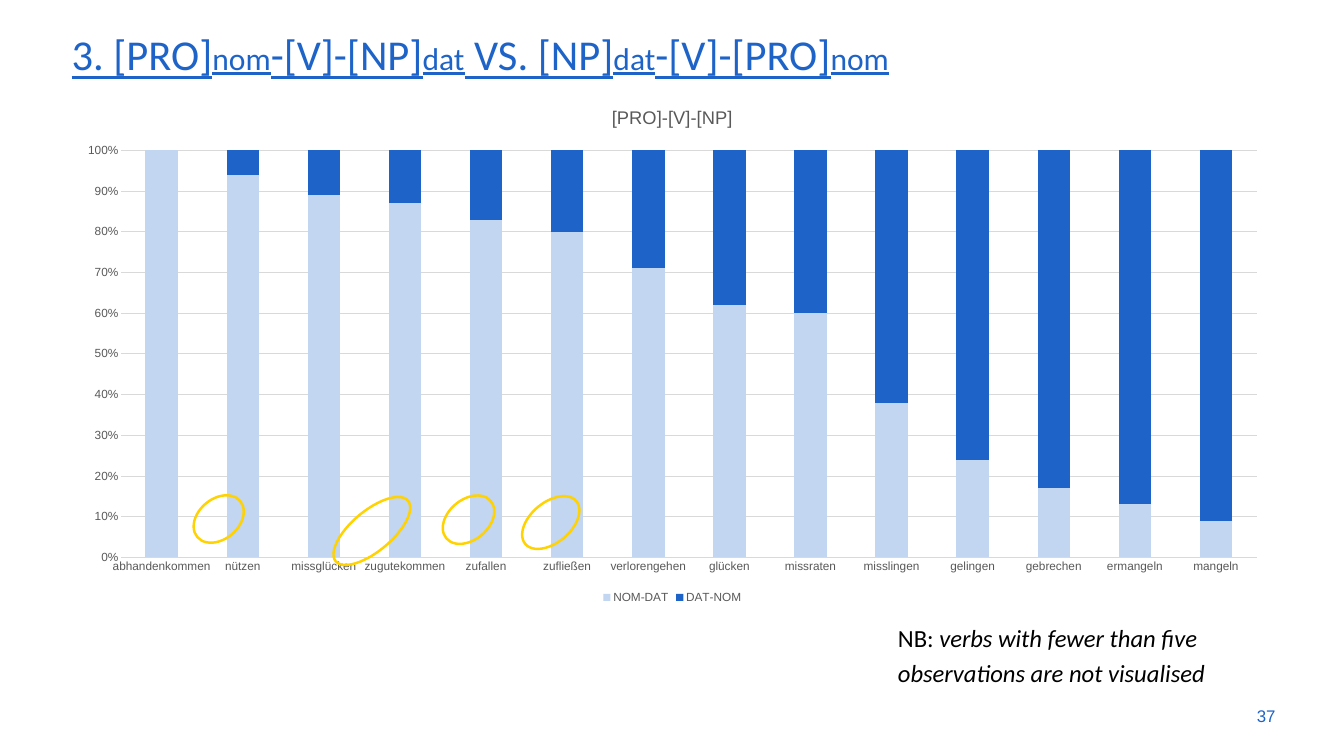
from dataclasses import dataclass

from pptx import Presentation
from pptx import util as u
from pptx.chart.data import CategoryChartData
from pptx.dml.color import RGBColor
from pptx.enum import chart as charts, shapes, text

Pt = u.Pt
BLUE = RGBColor(0x1E, 0x64, 0xC8)
PALE_BLUE = RGBColor(0xC2, 0xD5, 0xF1)
YELLOW = RGBColor(0xFF, 0xD2, 0x00)
BLACK = RGBColor(0, 0, 0)
GREY = RGBColor(0x59, 0x59, 0x59)
GRID = RGBColor(0xD9, 0xD9, 0xD9)


@dataclass(frozen=True)
class Box:
    left: float
    top: float
    width: float
    height: float

    def emu(self) -> tuple:
        return Pt(self.left), Pt(self.top), Pt(self.width), Pt(self.height)


TITLE_BOX = Box(65.5, 20.2, 1237, 67.7)
CHART_BOX = Box(64.8, 89.3, 1236.2, 527)
NOTE_BOX = Box(905, 623.5, 397.4, 76.3)
NUMBER_BOX = Box(1229.8, 707, 72.7, 41)
RING_HEIGHT = 41
RINGS = [
    Box(329.8, 519.1, 95.8, RING_HEIGHT),
    Box(446.4, 507.6, 59, RING_HEIGHT),
    Box(525.6, 510.5, 67.7, RING_HEIGHT),
    Box(193.7, 506.9, 56.9, RING_HEIGHT),
]

TITLE_PARTS = [("3. [pro]", "nom"), ("-[v]-[np]", "dat"),
               (" vs. [np]", "dat"), ("-[v]-[pro]", "nom")]
NOM_DAT = {
    "abhandenkommen": 100, "nützen": 94, "missglücken": 89,
    "zugutekommen": 87, "zufallen": 83, "zufließen": 80,
    "verlorengehen": 71, "glücken": 62, "missraten": 60,
    "misslingen": 38, "gelingen": 24, "gebrechen": 17,
    "ermangeln": 13, "mangeln": 9,
}


def format_font(font, size: float, color: RGBColor, name: str = "Arial") -> None:
    font.name, font.size, font.bold = name, Pt(size), False
    font.color.rgb = color


def add_run(p, content: str, *, size: float, color: RGBColor,
            name: str = "Calibri", italic: bool = False,
            underline: bool = False, small_caps: bool = False) -> None:
    r = p.add_run()
    r.text = content
    format_font(r.font, size, color, name)
    if italic:
        r.font.italic = True
    if underline:
        r.font.underline = True
    if small_caps:
        r._r.get_or_add_rPr().set("cap", "small")


def add_title(s) -> None:
    sp = s.shapes.title
    sp.left, sp.top, sp.width, sp.height = TITLE_BOX.emu()
    tf = sp.text_frame
    tf.word_wrap = True
    tf.auto_size = text.MSO_AUTO_SIZE.NONE
    tf.vertical_anchor = text.MSO_ANCHOR.MIDDLE
    p = tf.paragraphs[0]
    p.alignment = text.PP_ALIGN.LEFT
    p.line_spacing = 0.9
    for pattern, case in TITLE_PARTS:
        add_run(p, pattern, size=54, color=BLUE, underline=True, small_caps=True)
        add_run(p, case, size=32, color=BLUE, underline=True)


def add_text_box(s, box: Box):
    tf = s.shapes.add_textbox(*box.emu()).text_frame
    tf.word_wrap = True
    return tf


def format_axis(axis) -> None:
    axis.major_tick_mark = axis.minor_tick_mark = charts.XL_TICK_MARK.NONE
    format_font(axis.tick_labels.font, 12, GREY)


def format_line(line, color: RGBColor, width: float) -> None:
    line.color.rgb = color
    line.width = Pt(width)


def add_verb_chart(s) -> None:
    data = CategoryChartData()
    data.categories = list(NOM_DAT)
    data.add_series("NOM-DAT", list(NOM_DAT.values()))
    data.add_series("DAT-NOM", [100 - share for share in NOM_DAT.values()])
    chart = s.shapes.add_chart(charts.XL_CHART_TYPE.COLUMN_STACKED_100,
                               *CHART_BOX.emu(), data).chart
    format_font(chart.font, 10, BLACK)

    chart.has_title = True
    p = chart.chart_title.text_frame.paragraphs[0]
    add_run(p, "[PRO]-[V]-[NP]", size=18.6, color=GREY, name="Arial")
    chart.chart_title.include_in_layout = False

    chart.has_legend = True
    chart.legend.position = charts.XL_LEGEND_POSITION.BOTTOM
    chart.legend.include_in_layout = False
    format_font(chart.legend.font, 12, GREY)

    verbs, shares = chart.category_axis, chart.value_axis
    format_axis(verbs)
    format_line(verbs.format.line, GRID, 0.75)
    format_axis(shares)
    shares.format.line.fill.background()
    shares.has_major_gridlines = True
    format_line(shares.major_gridlines.format.line, GRID, 0.75)
    shares.tick_labels.number_format = "0%"
    shares.tick_labels.number_format_is_linked = False

    plot = chart.plots[0]
    plot.gap_width, plot.overlap = 150, 100
    plot.vary_by_categories = False
    for series, color in zip(plot.series, (PALE_BLUE, BLUE)):
        series.format.fill.solid()
        series.format.fill.fore_color.rgb = color


def add_page_number(s) -> None:
    tf = add_text_box(s, NUMBER_BOX)
    tf.vertical_anchor = text.MSO_ANCHOR.MIDDLE
    p = tf.paragraphs[0]
    p.alignment = text.PP_ALIGN.RIGHT
    add_run(p, "37", size=17.1, color=BLUE, name="Arial")


def add_note(s) -> None:
    tf = add_text_box(s, NOTE_BOX)
    tf.auto_size = text.MSO_AUTO_SIZE.SHAPE_TO_FIT_TEXT
    p = tf.paragraphs[0]
    p.line_spacing = 1.2
    add_run(p, "NB: ", size=25, color=BLACK)
    add_run(p, "verbs with fewer than five observations are not visualised",
            size=25, color=BLACK, italic=True)


def add_ring(s, box: Box) -> None:
    sp = s.shapes.add_shape(shapes.MSO_SHAPE.OVAL, *box.emu())
    sp.rotation = 320
    sp.shadow.inherit = False
    sp.fill.background()
    format_line(sp.line, YELLOW, 2.5)


def main() -> None:
    prs = Presentation()
    prs.slide_width, prs.slide_height = Pt(1365.12), Pt(768.24)
    s = prs.slides.add_slide(prs.slide_layouts[5])
    add_title(s)
    add_verb_chart(s)
    add_page_number(s)
    add_note(s)
    for ring in RINGS:
        add_ring(s, ring)
    prs.save("out.pptx")


if __name__ == "__main__":
    main()
